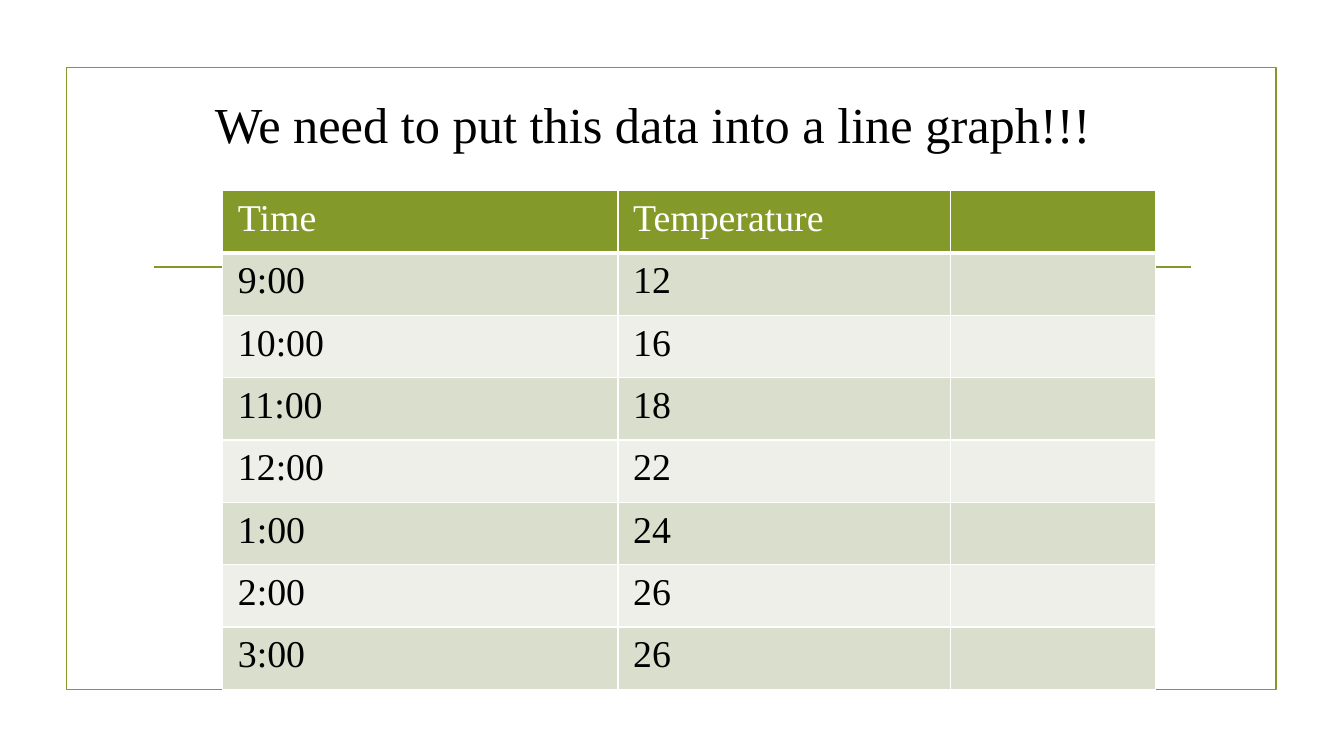
from lxml.etree import SubElement
from pptx import Presentation
from pptx.dml.color import RGBColor
from pptx.enum.shapes import MSO_CONNECTOR, MSO_SHAPE
from pptx.enum.text import MSO_ANCHOR, PP_ALIGN
from pptx.oxml.ns import qn
from pptx.util import Inches, Pt

OLIVE = RGBColor(0x83, 0x99, 0x2A)
SAGE = RGBColor(0xD9, 0xDE, 0xCD)
PALE_SAGE = RGBColor(0xED, 0xEF, 0xE8)
WHITE = RGBColor(0xFF, 0xFF, 0xFF)
BLACK = RGBColor(0, 0, 0)
FONT = "Times New Roman"

READINGS = [
    ("Time", "Temperature", ""),
    ("9:00", "12", ""),
    ("10:00", "16", ""),
    ("11:00", "18", ""),
    ("12:00", "22", ""),
    ("1:00", "24", ""),
    ("2:00", "26", ""),
    ("3:00", "26", ""),
]
COLUMN_WIDTHS = (3.92, 3.3, 2.03)


def write_text(frame, text, size, color=BLACK, align=PP_ALIGN.LEFT):
    paragraph = frame.paragraphs[0]
    paragraph.alignment = align
    run = paragraph.add_run()
    run.text = text
    run.font.name = FONT
    run.font.size = Pt(size)
    run.font.color.rgb = color


def set_borders(cell, bottom=1):
    """Give a cell white 1 pt borders, with its own bottom width in points."""
    properties = cell._tc.get_or_add_tcPr()
    for side, width in (("L", 1), ("R", 1), ("T", 1), ("B", bottom)):
        border = SubElement(properties, qn(f"a:ln{side}"), w=str(Pt(width)))
        fill = SubElement(border, qn("a:solidFill"))
        SubElement(fill, qn("a:srgbClr"), val=str(WHITE))


def add_frame(slide, left, top, width, height):
    """Draw the olive outline and the rule across its upper part."""
    outline = slide.shapes.add_shape(
        MSO_SHAPE.RECTANGLE, Inches(left), Inches(top), Inches(width), Inches(height))
    outline.shadow.inherit = False
    outline.fill.background()
    rule_y = Inches(top + 1.98)
    rule = slide.shapes.add_connector(
        MSO_CONNECTOR.STRAIGHT, Inches(left + 0.87), rule_y,
        Inches(left + width - 0.85), rule_y)
    SubElement(rule._element.spPr, qn("a:effectLst"))
    for part in (outline, rule):
        part.line.color.rgb = OLIVE
        part.line.width = Pt(1.25)


def add_title(slide, left, top, width, height):
    title = slide.shapes.title
    title.left, title.top = Inches(left), Inches(top)
    title.width, title.height = Inches(width), Inches(height)
    title.text_frame.word_wrap = True
    title.text_frame.vertical_anchor = MSO_ANCHOR.TOP
    write_text(title.text_frame, "We need to put this data into a line graph!!!", 36)


def add_readings(slide, left, top, width, height):
    table = slide.shapes.add_table(
        len(READINGS), len(COLUMN_WIDTHS),
        Inches(left), Inches(top), Inches(width), Inches(height)).table
    for column, column_width in zip(table.columns, COLUMN_WIDTHS):
        column.width = Inches(column_width)
    for row, values in enumerate(READINGS):
        is_header = row == 0
        band = OLIVE if is_header else SAGE if row % 2 else PALE_SAGE
        for column, value in enumerate(values):
            cell = table.cell(row, column)
            cell.margin_left = cell.margin_right = Inches(0.15)
            cell.margin_top = cell.margin_bottom = Inches(0.07)
            set_borders(cell, bottom=3 if is_header else 1)
            cell.fill.solid()
            cell.fill.fore_color.rgb = band
            if value:
                write_text(cell.text_frame, value, 27, WHITE if is_header else BLACK)


def main():
    presentation = Presentation()
    presentation.slide_width = Inches(13.33)
    presentation.slide_height = Inches(7.5)
    slide = presentation.slides.add_slide(presentation.slide_layouts.get_by_name("Title Only"))
    add_frame(slide, 0.66, 0.67, 12, 6.17)
    add_title(slide, 2.03, 0.87, 9.61, 0.71)
    add_readings(slide, 2.21, 1.89, sum(COLUMN_WIDTHS), 4.95)
    presentation.save("out.pptx")


if __name__ == "__main__":
    main()
